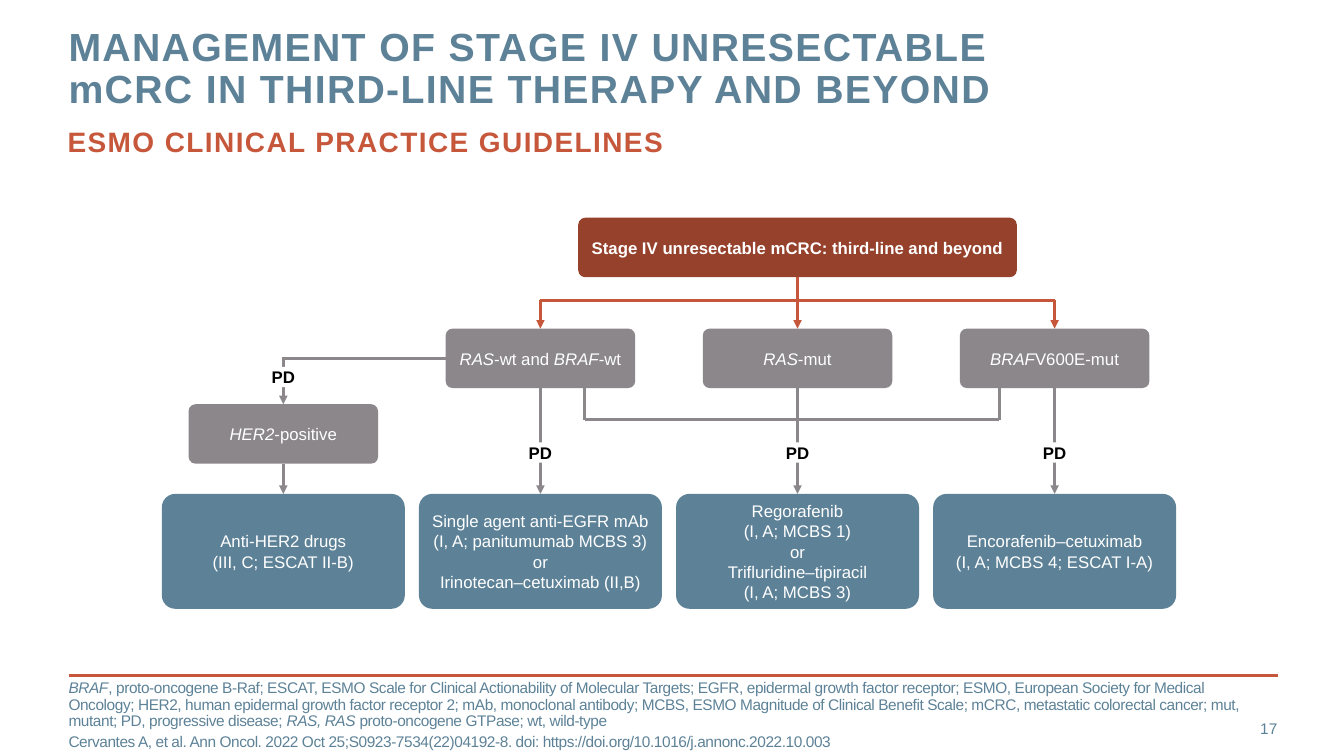
from lxml import etree
from pptx import Presentation, util as u
from pptx.dml.color import RGBColor
from pptx.enum import shapes, text
from pptx.oxml.ns import qn

COLORS = {"blue": "5D8298", "orange": "C6573B", "rust": "95412B",
          "gray": "8B878B", "white": "FFFFFF", "black": "000000"}
FONT = "Arial"

TITLE = "MANAGEMENT OF STAGE IV UNRESECTABLE mCRC IN THIRD-LINE THERAPY AND BEYOND"
SUBTITLE = "ESMO CLINICAL PRACTICE GUIDELINES"
PAGE = "17"
FOOTNOTES = [
    [("BRAF", True),
     (", proto-oncogene B-Raf; ESCAT, ESMO Scale for Clinical Actionability of Molecular "
      "Targets; EGFR, epidermal growth factor receptor; ESMO, European Society for Medical "
      "Oncology; HER2, human epidermal growth factor receptor 2; mAb, monoclonal antibody; "
      "MCBS, ESMO Magnitude of Clinical Benefit Scale; mCRC, metastatic colorectal cancer; "
      "mut, mutant; PD, progressive disease; ", False),
     ("RAS, RAS", True),
     (" proto-oncogene GTPase; wt, wild-type", False)],
    [("Cervantes A, et al. Ann Oncol. 2022 Oct 25;S0923-7534(22)04192-8. "
      "doi: https://doi.org/10.1016/j.annonc.2022.10.003", False)],
]
ROOT = [("Stage IV unresectable mCRC: third-line and beyond", False)]
BRANCHES = [
    ([("HER2", True), ("-positive", False)],
     "Anti-HER2 drugs\n(III, C; ESCAT II-B)"),
    ([("RAS", True), ("-wt and ", False), ("BRAF", True), ("-wt", False)],
     "Single agent anti-EGFR mAb\n(I, A; panitumumab MCBS 3)\nor\nIrinotecan–cetuximab (II,B)"),
    ([("RAS", True), ("-mut", False)],
     "Regorafenib\n(I, A; MCBS 1)\nor\nTrifluridine–tipiracil\n(I, A; MCBS 3)"),
    ([("BRAF", True), ("V600E-mut", False)],
     "Encorafenib–cetuximab\n(I, A; MCBS 4; ESCAT I-A)"),
]

FIRST_X, STEP = 2.81, 2.55
TYPE_W, TYPE_H, TYPE_Y, HER2_Y = 1.88, 0.59, 3.26, 4.01
DRUG_W, DRUG_H, DRUG_Y = 2.41, 1.14, 4.9
ROOT_W, ROOT_Y = 4.35, 2.16
SPLIT_Y, JOIN_Y = 2.98, 4.16
PD_W, PD_H, PD_Y, HER2_PD_Y = 0.39, 0.2, 4.39, 3.64
TOP, LEFT, BOTTOM = 0, 1, 2

prs = Presentation()
prs.slide_width, prs.slide_height = u.Inches(13.33), u.Inches(7.5)
s = prs.slides.add_slide(prs.slide_layouts[6])


def rgb(name):
    return RGBColor.from_string(COLORS[name])


def write(sp, paragraphs, size, color, bold=False, align=text.PP_ALIGN.LEFT,
          anchor=text.MSO_ANCHOR.TOP, inset=(0, 0), wrap=True, spacing=0):
    tf = sp.text_frame
    tf.word_wrap = wrap
    tf.vertical_anchor = anchor
    tf.margin_left = tf.margin_right = u.Inches(inset[0])
    tf.margin_top = tf.margin_bottom = u.Inches(inset[1])
    for i, runs in enumerate(paragraphs):
        p = tf.add_paragraph() if i else tf.paragraphs[0]
        p.alignment = align
        p.font.name, p.font.size, p.font.bold = FONT, u.Pt(size), bold
        p.font.color.rgb = rgb(color)
        for content, italic in runs:
            for n, line in enumerate(content.split("\n")):
                if n:
                    p.add_line_break()
                r = p.add_run()
                r.text = line
                if italic:
                    r.font.italic = True
                if spacing:
                    r._r.get_or_add_rPr().set("spc", str(spacing))
    return tf


def textbox(x, y, w, h, paragraphs, size, color, **options):
    sp = s.shapes.add_textbox(*map(u.Inches, (x, y, w, h)))
    return write(sp, paragraphs, size, color, **options)


def box(kind, center, y, w, h, fill):
    sp = s.shapes.add_shape(kind, *map(u.Inches, (center - w / 2, y, w, h)))
    sp.shadow.inherit = False
    sp.fill.solid()
    sp.fill.fore_color.rgb = rgb(fill)
    sp.line.fill.background()
    return sp


def node(center, y, w, h, fill, runs, bold=False):
    sp = box(shapes.MSO_SHAPE.ROUNDED_RECTANGLE, center, y, w, h, fill)
    sp.adjustments[0] = 0.117
    write(sp, [runs], 12, "white", bold=bold, align=text.PP_ALIGN.CENTER,
          anchor=text.MSO_ANCHOR.MIDDLE, inset=(0, 0.05))
    return sp


def pd_label(center, y):
    sp = box(shapes.MSO_SHAPE.RECTANGLE, center, y, PD_W, PD_H, "white")
    write(sp, [[("PD", False)]], 12, "black", bold=True,
          align=text.PP_ALIGN.CENTER, inset=(0.08, 0), wrap=False)


def line(color, start, end, begin=None, finish=None, arrow=False):
    c = s.shapes.add_connector(shapes.MSO_CONNECTOR.STRAIGHT,
                               *map(u.Inches, (*start, *end)))
    c.line.color.rgb = rgb(color)
    c.line.width = u.Pt(2)
    if arrow:
        etree.SubElement(c.line._get_or_add_ln(), qn("a:tailEnd"), type="triangle")
    etree.SubElement(c._element.spPr, qn("a:effectLst"))
    if begin:
        c.begin_connect(*begin)
    if finish:
        c.end_connect(*finish)


line("orange", (0.68, 6.7), (12.68, 6.7))
textbox(0.67, 1.24, 12, 0.77, [[(SUBTITLE, False)]], 20, "orange", bold=True, spacing=100)
title = textbox(0.68, 0.27, 9.56, 0.88, [[(TITLE, False)]], 28, "blue", bold=True, spacing=100)
title.paragraphs[0].line_spacing = u.Pt(30)
textbox(11.81, 7.03, 0.86, 0.4, [[(PAGE, False)]], 11, "blue",
        align=text.PP_ALIGN.RIGHT, anchor=text.MSO_ANCHOR.MIDDLE)
notes = textbox(0.68, 6.9, 11.66, 0.4, FOOTNOTES, 11, "blue",
                anchor=text.MSO_ANCHOR.MIDDLE, spacing=-30)
for p in notes.paragraphs:
    p.line_spacing = 0.9
notes.paragraphs[1].space_before = u.Pt(3)

centers = [FIRST_X + i * STEP for i in range(len(BRANCHES))]
root = node(centers[2], ROOT_Y, ROOT_W, TYPE_H, "rust", ROOT, bold=True)
types, drugs = [], []
for i, (x, (marker, drug)) in enumerate(zip(centers, BRANCHES)):
    types.append(node(x, TYPE_Y if i else HER2_Y, TYPE_W, TYPE_H, "gray", marker))
    drugs.append(node(x, DRUG_Y, DRUG_W, DRUG_H, "blue", [(drug, False)]))

line("orange", (centers[1], SPLIT_Y), (centers[3], SPLIT_Y))
for i, x in enumerate(centers):
    if i:
        begin = (root, BOTTOM) if i == 2 else None
        line("orange", (x, SPLIT_Y), (x, TYPE_Y), begin, (types[i], TOP), True)
    line("gray", (x, TYPE_Y), (x, DRUG_Y), (types[i], BOTTOM), (drugs[i], TOP), True)

type_bottom = TYPE_Y + TYPE_H
join_ends = (5.8, 9.91)
line("gray", (join_ends[0], JOIN_Y), (join_ends[1], JOIN_Y))
for x in join_ends:
    line("gray", (x, type_bottom), (x, JOIN_Y + 0.01))

her2_y = TYPE_Y + TYPE_H / 2
line("gray", (centers[1], her2_y), (FIRST_X, her2_y), begin=(types[1], LEFT))
line("gray", (FIRST_X, her2_y - 0.01), (FIRST_X, HER2_Y), finish=(types[0], TOP), arrow=True)

for i, x in enumerate(centers):
    pd_label(x, PD_Y if i else HER2_PD_Y)

prs.save("out.pptx")
